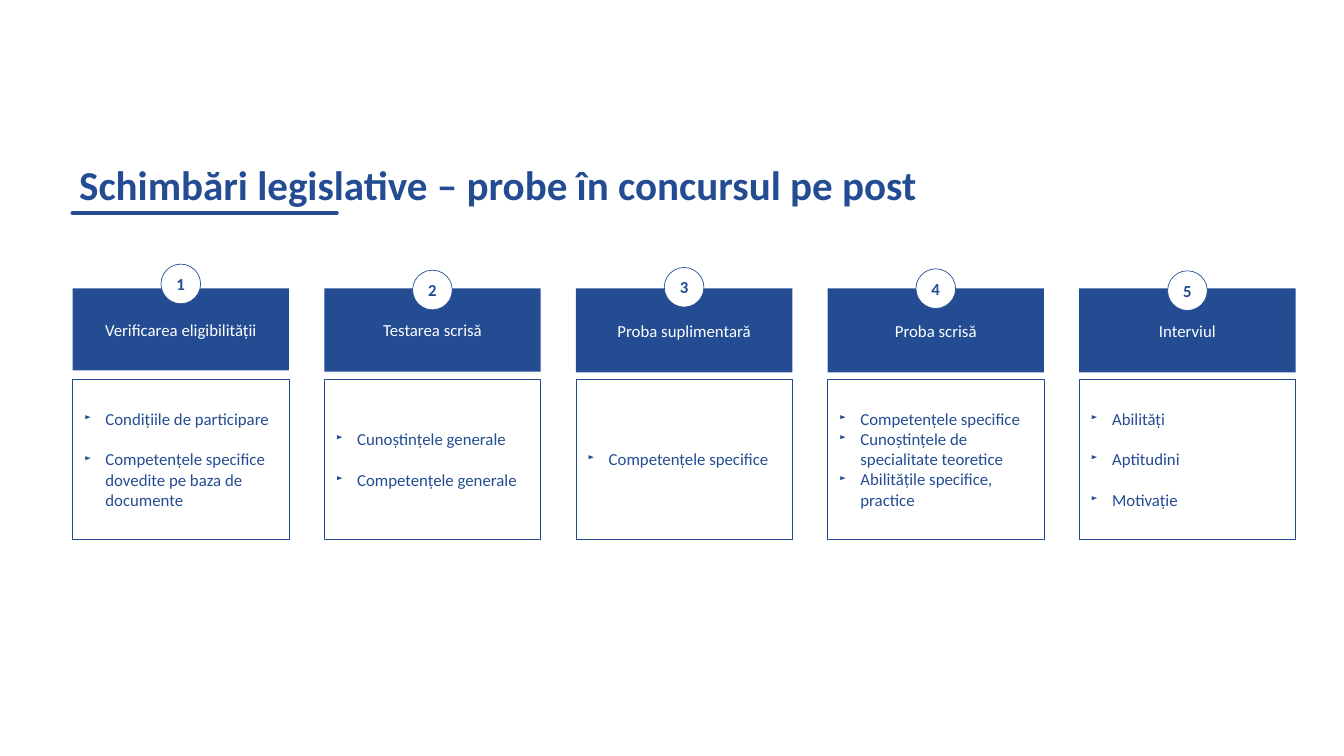
import pptx
import pptx.util
import pptx.dml.color
import pptx.enum.shapes
import pptx.enum.text
import pptx.oxml.ns
import lxml.etree

Inches, Pt = pptx.util.Inches, pptx.util.Pt
KIND = pptx.enum.shapes.MSO_SHAPE
ALIGN = pptx.enum.text.PP_ALIGN
qn = pptx.oxml.ns.qn
BLUE, WHITE = "234C93", "FFFFFF"


def rgb(code):
    return pptx.dml.color.RGBColor.from_string(code)


def add_box(kind, left, top, width, height, fill, line, lines, ink, bold=False, listed=False, gap=0):
    """Add a shape with centred text, or with a bulleted list when listed."""
    box = slide.shapes.add_shape(kind, Inches(left), Inches(top), Inches(width), Inches(height))
    box.shadow.inherit = False
    if fill:
        box.fill.solid()
        box.fill.fore_color.rgb = rgb(fill)
    else:
        box.fill.background()
    if line:
        box.line.color.rgb = rgb(line)
        box.line.width = Pt(0.75)
    else:
        box.line.fill.background()
    frame = box.text_frame
    frame.word_wrap = True
    frame.vertical_anchor = pptx.enum.text.MSO_ANCHOR.MIDDLE
    if kind == KIND.OVAL:
        frame.margin_left = frame.margin_right = frame.margin_top = frame.margin_bottom = 0
    for i, text in enumerate(lines):
        para = frame.paragraphs[0] if i == 0 else frame.add_paragraph()
        para.text = text
        para.alignment = ALIGN.LEFT if listed else ALIGN.CENTER
        if listed:
            props = para._p.get_or_add_pPr()
            props.set("marL", str(Inches(0.39)))
            props.set("indent", str(Inches(-0.31)))
            if i and gap:
                para.space_before = Pt(gap)
            tint = lxml.etree.SubElement(props, qn("a:buClr"))
            lxml.etree.SubElement(tint, qn("a:srgbClr"), val=BLUE)
            lxml.etree.SubElement(props, qn("a:buSzPct"), val="50000")
            lxml.etree.SubElement(props, qn("a:buChar"), char="►")
        para.font.name = "Calibri"
        para.font.size = Pt(18)
        para.font.bold = bold
        para.font.color.rgb = rgb(ink)


deck = pptx.Presentation()
deck.slide_width, deck.slide_height = Inches(20), Inches(11.25)
slide = deck.slides.add_slide(deck.slide_layouts[6])

# Title and its underline
title = slide.shapes.add_textbox(Inches(1.08), Inches(2.41), Inches(16.17), Inches(0.77))
title.text_frame.word_wrap = True
head = title.text_frame.paragraphs[0]
head.text = "Schimbări legislative – probe în concursul pe post"
head.line_spacing = 0.9
head.font.name = "Calibri"
head.font.size = Pt(44)
head.font.bold = True
head.font.color.rgb = rgb(BLUE)

rule = slide.shapes.add_connector(pptx.enum.shapes.MSO_CONNECTOR.STRAIGHT,
                                  Inches(1.08), Inches(3.17), Inches(5.01), Inches(3.17))
rule.line.color.rgb = rgb(BLUE)
rule.line.width = Pt(4.5)
rule.line._ln.set("cap", "rnd")
lxml.etree.SubElement(rule._element.spPr, qn("a:effectLst"))

# Stages: name, header height, badge top, gap between points, points
stages = [
    ("Verificarea eligibilității", 1.22, 3.93, 22,
     ["Condițiile de participare", "Competențele specifice dovedite pe baza de documente"]),
    ("Testarea scrisă", 1.24, 4.02, 22, ["Cunoștințele generale", "Competențele generale"]),
    ("Proba suplimentară", 1.25, 3.98, 0, ["Competențele specifice"]),
    ("Proba scrisă", 1.25, 4, 0,
     ["Competențele specifice", "Cunoștințele de specialitate teoretice",
      "Abilitățile specifice, practice"]),
    ("Interviul", 1.25, 4.03, 22, ["Abilități", "Aptitudini", "Motivație"]),
]
WIDTH, BADGE = 3.22, 0.59
START, STEP = 1.08, 3.745
for n, (name, height, top, gap, points) in enumerate(stages):
    left = START + n * STEP
    add_box(KIND.RECTANGLE, left, 4.29, WIDTH, height, BLUE, None, [name], WHITE)
    add_box(KIND.OVAL, left + (WIDTH - BADGE) / 2, top, BADGE, BADGE, WHITE, BLUE,
            [str(n + 1)], BLUE, bold=True)
    add_box(KIND.RECTANGLE, left, 5.64, WIDTH, 2.38, None, BLUE, points, BLUE,
            listed=True, gap=gap)

deck.save("out.pptx")
